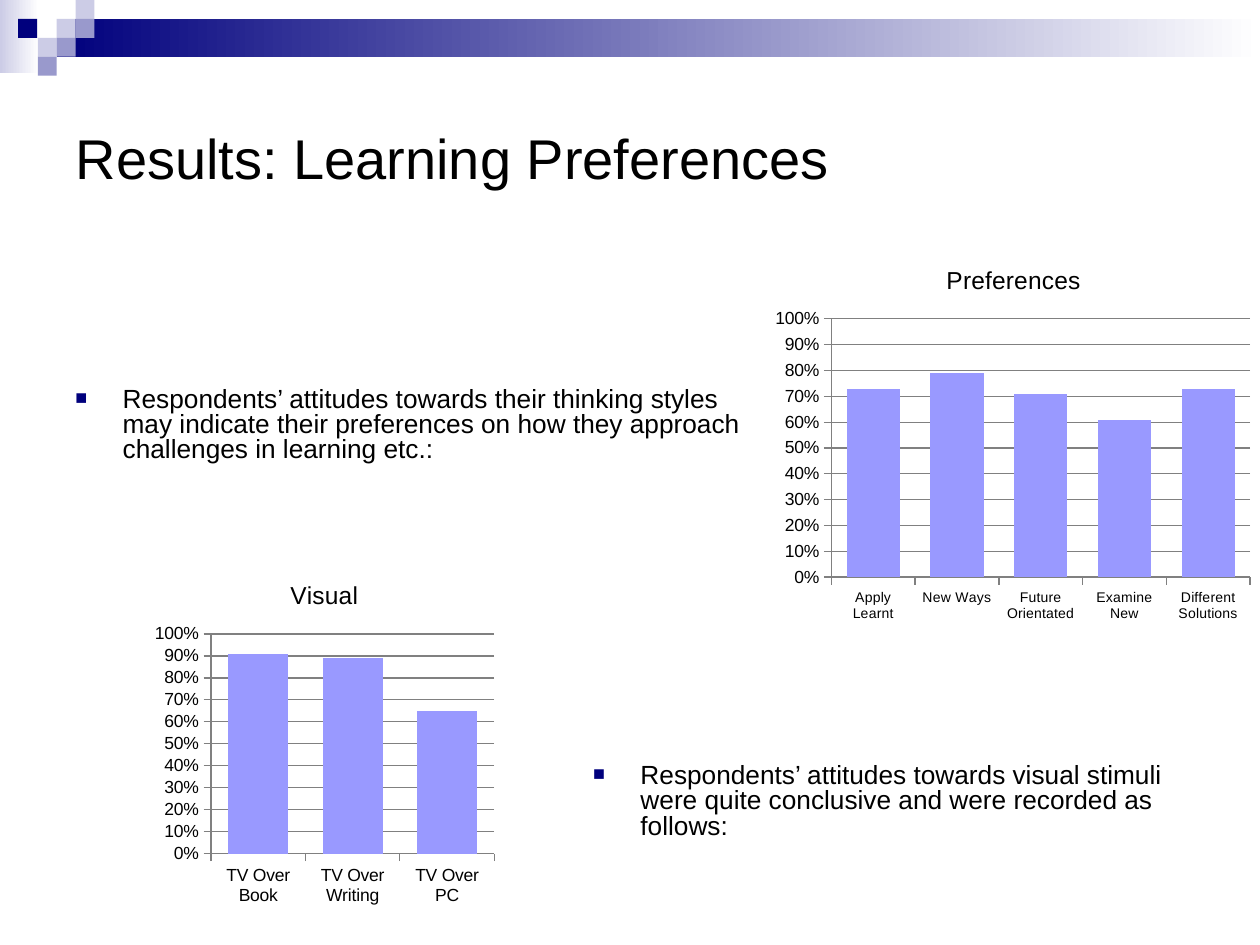
"""Build the slide on learning preferences with two column charts."""
from lxml.etree import SubElement
from pptx import Presentation
from pptx.chart.data import CategoryChartData
from pptx.dml.color import RGBColor
from pptx.enum.chart import XL_CHART_TYPE, XL_TICK_MARK
from pptx.enum.shapes import MSO_SHAPE
from pptx.enum.text import MSO_ANCHOR, PP_ALIGN
from pptx.oxml import parse_xml
from pptx.oxml.ns import nsdecls, qn
from pptx.util import Pt

HUES = {"navy": "00007D", "pale": "CCCCE6", "mid": "9999CC", "white": "FFFFFF",
        "bar": "9999FF", "ink": "000000", "grid": "808080"}


def hue(name):
    return RGBColor.from_string(HUES[name])


def style(font, size):
    font.name, font.size, font.bold = "Arial", Pt(size), False
    font.color.rgb = hue("ink")


deck = Presentation()
deck.slide_width, deck.slide_height = Pt(720), Pt(540)
slide = deck.slides.add_slide(deck.slide_layouts[5])

blocks = [
    (0, 0, 22.3, 41.8, "pale", True),
    (32.4, 10.8, 687.6, 21.6, "navy", True),
    (32.4, 10.8, 10.8, 10.8, "pale", False),
    (43.2, 0, 10.8, 10.8, "pale", False),
    (43.2, 10.8, 10.8, 10.8, "mid", False),
    (21.6, 21.6, 10.8, 10.8, "pale", False),
    (10.4, 10.8, 10.8, 10.8, "navy", False),
    (32.4, 21.6, 10.8, 10.8, "mid", False),
    (21.6, 32.4, 10.8, 10.8, "mid", False),
]
for x, y, w, h, tone, fade in blocks:
    block = slide.shapes.add_shape(MSO_SHAPE.RECTANGLE, Pt(x), Pt(y), Pt(w), Pt(h))
    block.shadow.inherit = False
    block.line.fill.background()
    if fade:
        block.fill.gradient()
        block.fill.gradient_angle = 0
        for stop, name, place in zip(block.fill.gradient_stops, (tone, "white"), (0, 1)):
            stop.color.rgb = hue(name)
            stop.position = place
    else:
        block.fill.solid()
        block.fill.fore_color.rgb = hue(tone)

title = slide.shapes.title
title.left, title.top, title.width, title.height = Pt(36), Pt(36), Pt(648), Pt(108)
title.text_frame.vertical_anchor = MSO_ANCHOR.MIDDLE
para = title.text_frame.paragraphs[0]
para.alignment = PP_ALIGN.LEFT
run = para.add_run()
run.text = "Results: Learning Preferences"
style(run.font, 32)

notes = [
    (36, 218.2, 397.4, 63.4, "Respondents’ attitudes towards their thinking styles may indicate "
     "their preferences on how they approach challenges in learning etc.:"),
    (331.9, 433.4, 370.1, 61.9, "Respondents’ attitudes towards visual stimuli were quite "
     "conclusive and were recorded as follows:"),
]
for x, y, w, h, text in notes:
    frame = slide.shapes.add_textbox(Pt(x), Pt(y), Pt(w), Pt(h)).text_frame
    frame.word_wrap = True
    para = frame.paragraphs[0]
    para.line_spacing, para.space_before = 0.8, Pt(3)
    run = para.add_run()
    run.text = text
    style(run.font, 15)
    props = para._p.get_or_add_pPr()
    props.set("marL", str(Pt(27)))
    props.set("indent", str(Pt(-27)))
    tint = SubElement(props, qn("a:buClr"))
    SubElement(tint, qn("a:srgbClr"), val=HUES["navy"])
    SubElement(props, qn("a:buSzPct"), val="75000")
    SubElement(props, qn("a:buFont"), typeface="Arial")
    SubElement(props, qn("a:buChar"), char="■")

charts = [
    ("Preferences", (438.5, 140.4, 281.5, 220.3), (0.13, 0.19, 0.85, 0.67), 8, 0,
     {"Apply Learnt": 0.73, "New Ways": 0.79, "Future Orientated": 0.71,
      "Examine New": 0.61, "Different Solutions": 0.73}),
    ("Visual", (84.2, 320.4, 202.3, 199.4), (0.18, 0.21, 0.8, 0.63), 10, -27,
     {"TV Over Book": 0.91, "TV Over Writing": 0.89, "TV Over PC": 0.65}),
]
for name, spot, inner, size, lap, vals in charts:
    data = CategoryChartData(number_format="0%")
    data.categories = list(vals)
    data.add_series(name, list(vals.values()))
    chart = slide.shapes.add_chart(
        XL_CHART_TYPE.COLUMN_CLUSTERED, *map(Pt, spot), data).chart
    style(chart.font, 10)
    chart.has_legend = False
    chart.has_title = True
    run = chart.chart_title.text_frame.paragraphs[0].add_run()
    run.text = name
    style(run.font, 14)
    chart.chart_title.include_in_layout = False

    plot = chart.plots[0]
    plot.vary_by_categories = False
    plot.gap_width, plot.overlap = 57, lap
    fill = plot.series[0].format.fill
    fill.solid()
    fill.fore_color.rgb = hue("bar")

    cats, scale = chart.category_axis, chart.value_axis
    scale.minimum_scale, scale.maximum_scale, scale.major_unit = 0, 1, 0.1
    scale.has_major_gridlines = True
    scale.tick_labels.number_format = "0%"
    scale.tick_labels.number_format_is_linked = False
    for axis, points in ((cats, size), (scale, 10)):
        axis.major_tick_mark = XL_TICK_MARK.OUTSIDE
        style(axis.tick_labels.font, points)
    for line in (cats.format.line, scale.format.line, scale.major_gridlines.format.line):
        line.color.rgb = hue("grid")
        line.width = Pt(0.75)

    area = chart._chartSpace.chart.plotArea
    for old in area.findall(qn("c:layout")):
        area.remove(old)
    marks = "".join(f'<c:{tag} val="{val}"/>' for tag, val in zip("xywh", inner))
    area.insert(0, parse_xml(
        f'<c:layout {nsdecls("c")}><c:manualLayout><c:layoutTarget val="inner"/>'
        f'<c:xMode val="edge"/><c:yMode val="edge"/>{marks}</c:manualLayout></c:layout>'))

deck.save("out.pptx")
